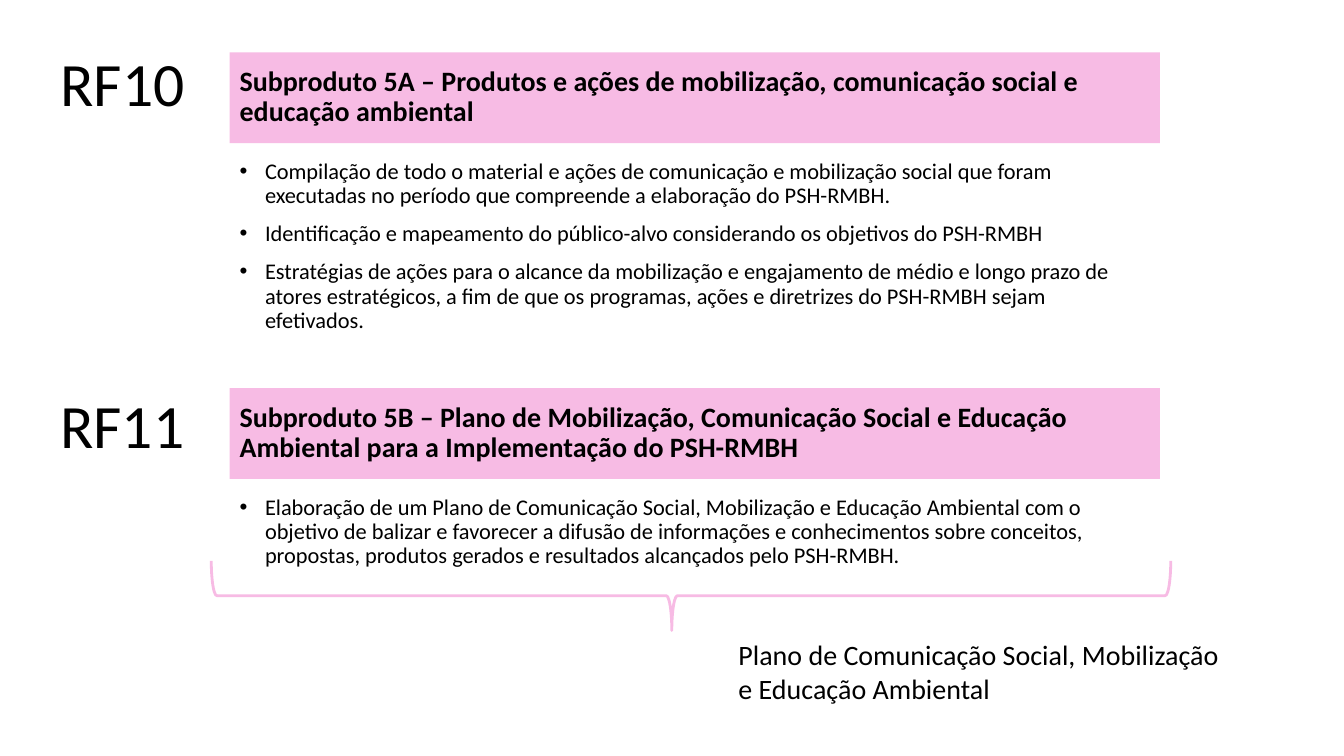
from lxml import etree
from pptx import Presentation
from pptx.dml.color import RGBColor
from pptx.enum import shapes, text
from pptx.oxml.ns import qn
from pptx.util import Cm, Pt

FONT, BLACK, PINK = "Calibri", "000000", "F7BBE4"

# Content: code, heading, bullets, tops of code / heading bar / bullets in cm
SECTIONS = [
    ("RF10",
     "Subproduto 5A – Produtos e ações de mobilização, comunicação social e educação ambiental",
     ["Compilação de todo o material e ações de comunicação e mobilização social que foram "
      "executadas no período que compreende a elaboração do PSH-RMBH.",
      "Identificação e mapeamento do público-alvo considerando os objetivos do PSH-RMBH",
      "Estratégias de ações para o alcance da mobilização e engajamento de médio e longo prazo "
      "de atores estratégicos, a fim de que os programas, ações e diretrizes do PSH-RMBH sejam "
      "efetivados."],
     (0.33, 1.32, 3.91)),
    ("RF11",
     "Subproduto 5B – Plano de Mobilização, Comunicação Social e Educação Ambiental para a "
     "Implementação do PSH-RMBH",
     ["Elaboração de um Plano de Comunicação Social, Mobilização e Educação Ambiental com o "
      "objetivo de balizar e favorecer a difusão de informações e conhecimentos sobre conceitos, "
      "propostas, produtos gerados e resultados alcançados pelo PSH-RMBH."],
     (8.97, 9.78, 12.37)),
]
OUTCOME = "Plano de Comunicação Social, Mobilização e Educação Ambiental"

CODE_LEFT, CODE_W, CODE_H = 1.27, 29.21, 3.68
BODY_LEFT, BODY_W, BAR_H, BULLETS_H = 5.79, 23.44, 2.29, 5.21


def rgb(value):
    return RGBColor.from_string(value)


def box(left, top, width, height):
    return [Cm(v) for v in (left, top, width, height)]


def add_bullet(p):
    pPr = p._p.get_or_add_pPr()
    pPr.set("marL", str(Cm(0.64)))
    pPr.set("indent", str(Cm(-0.64)))
    etree.SubElement(pPr, qn("a:buFont")).set("typeface", "Arial")
    etree.SubElement(pPr, qn("a:buChar")).set("char", "•")


def write(sp, lines, size, bold=False, middle=False, bullets=False, spacing=0.9):
    tf = sp.text_frame
    tf.text = "\n".join(lines)
    tf.word_wrap = True
    tf.auto_size = text.MSO_AUTO_SIZE.NONE
    tf.vertical_anchor = text.MSO_ANCHOR.MIDDLE if middle else text.MSO_ANCHOR.TOP
    for i, p in enumerate(tf.paragraphs):
        p.alignment = text.PP_ALIGN.LEFT
        p.line_spacing = spacing
        p.space_before = Pt(10 if i else 0)
        if bullets:
            add_bullet(p)
        for r in p.runs:
            r.font.name, r.font.size, r.font.bold = FONT, Pt(size), bold
            r.font.color.rgb = rgb(BLACK)


prs = Presentation()
prs.slide_width, prs.slide_height = Cm(33.87), Cm(19.05)
s = prs.slides.add_slide(prs.slide_layouts[5])

# Sections: code, pink heading bar, bullets
for i, (code, heading, bullets, (code_top, bar_top, bullets_top)) in enumerate(SECTIONS):
    place = box(CODE_LEFT, code_top, CODE_W, CODE_H)
    if i == 0:
        sp = s.shapes.title
        sp.left, sp.top, sp.width, sp.height = place
    else:
        sp = s.shapes.add_textbox(*place)
    write(sp, [code], 44, middle=True)

    bar = s.shapes.add_shape(shapes.MSO_SHAPE.RECTANGLE,
                             *box(BODY_LEFT, bar_top, BODY_W, BAR_H))
    bar.shadow.inherit = False
    bar.fill.solid()
    bar.fill.fore_color.rgb = rgb(PINK)
    bar.line.fill.background()
    write(bar, [heading], 20, bold=True, middle=True)

    sp = s.shapes.add_textbox(*box(BODY_LEFT, bullets_top, BODY_W, BULLETS_H))
    write(sp, bullets, 16, bullets=True)

# Outcome under the brace
sp = s.shapes.add_textbox(*box(18.36, 15.95, 12.8, 1.96))
write(sp, [OUTCOME], 20, spacing=1.0)

# Brace pointing down, turned from a left brace
brace = s.shapes.add_shape(shapes.MSO_SHAPE.LEFT_BRACE, *box(16.54, 2.92, 1.75, 24.18))
brace.rotation = 270
brace.adjustments[0], brace.adjustments[1] = 0.08, 0.48
brace.shadow.inherit = False
brace.fill.background()
brace.line.color.rgb = rgb(PINK)
brace.line.width = Pt(2)

prs.save("out.pptx")
